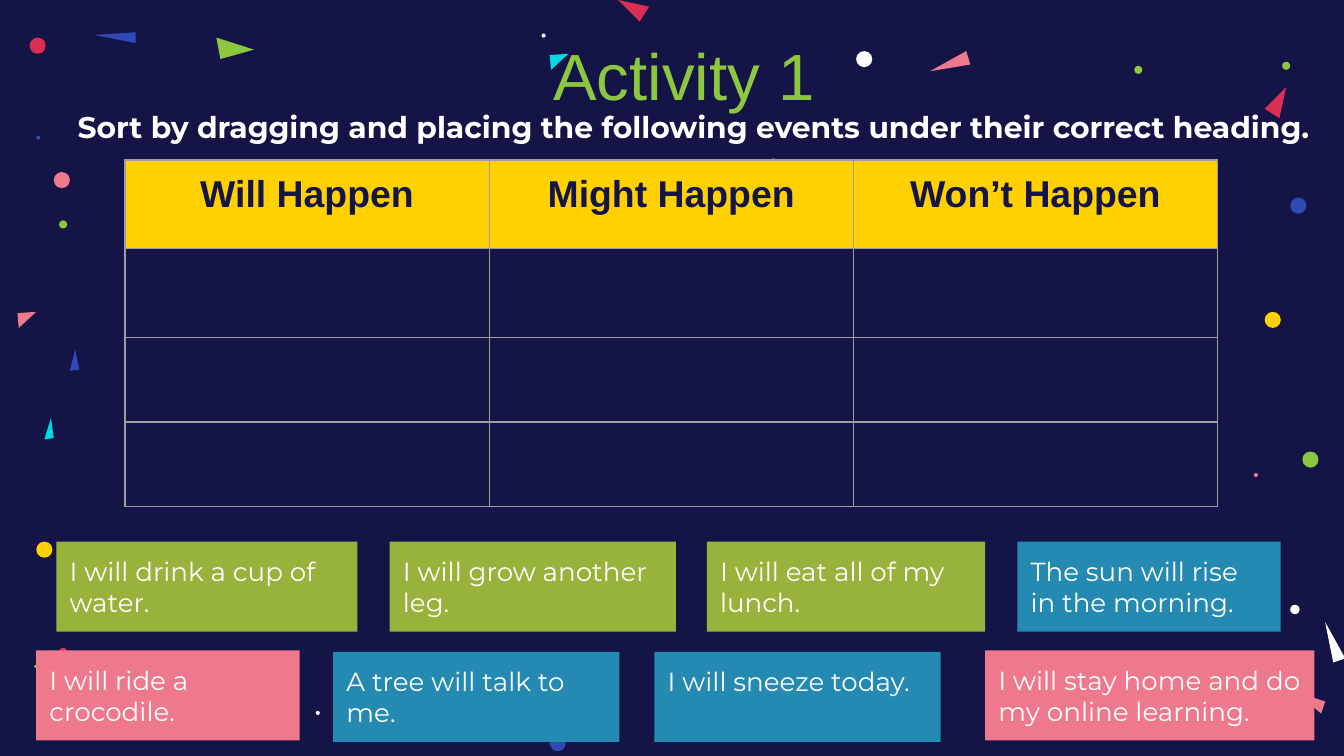
"""Build the Activity 1 sorting slide with its table and event cards."""
from lxml import etree
from pptx import Presentation
from pptx import util as u
from pptx.dml.color import RGBColor
from pptx.enum import shapes, text
from pptx.oxml import ns

NAVY = RGBColor(0x14, 0x14, 0x47)
WHITE = RGBColor(0xFF, 0xFF, 0xFF)
LIME = RGBColor(0x8D, 0xC6, 0x3F)
GOLD = RGBColor(0xFF, 0xD1, 0x00)
PINK = RGBColor(0xEE, 0x79, 0x8D)
RED = RGBColor(0xDB, 0x2E, 0x53)
BLUE = RGBColor(0x30, 0x49, 0xB5)
CYAN = RGBColor(0x00, 0xD9, 0xE2)
OLIVE = RGBColor(0x97, 0xB3, 0x3C)
TEAL = RGBColor(0x24, 0x8A, 0xB1)
GREY = RGBColor(0x9E, 0x9E, 0x9E)

TITLE = "Activity 1"
TASK = "Sort by dragging and placing the following events under their correct heading."
HEADS = ["Will Happen", "Might Happen", "Won’t Happen"]
ROWS = [0.66, 0.66, 0.63, 0.63]
COL = 2.71
CARDS = [
    ("I will drink a cup of water.", 0.42, 4.03, 2.24, OLIVE),
    ("I will grow another leg.", 2.9, 4.03, 2.13, OLIVE),
    ("I will eat all of my lunch.", 5.26, 4.03, 2.07, OLIVE),
    ("The sun will rise in the morning.", 7.57, 4.03, 1.96, TEAL),
    ("A tree will talk to me.", 2.48, 4.85, 2.13, TEAL),
    ("I will sneeze today.", 4.87, 4.85, 2.13, TEAL),
    ("I will ride a crocodile.", 0.27, 4.84, 1.96, PINK),
    ("I will stay home and do my online learning.", 7.33, 4.84, 2.45, PINK),
]
DOTS = {
    0.03: [(9.33, 3.52, PINK), (9.09, 0.92, WHITE), (2.35, 5.29, WHITE),
           (4.03, 0.25, WHITE), (5.74, 1.18, WHITE), (0.27, 1.01, BLUE)],
    0.06: [(0.44, 1.64, LIME), (0.44, 4.82, RED), (9.54, 0.46, LIME),
           (8.44, 0.49, LIME)],
    0.07: [(9.6, 4.5, WHITE)],
    0.12: [(9.6, 1.47, BLUE), (0.4, 1.28, PINK), (4.09, 5.47, BLUE),
           (0.22, 0.28, RED), (0.27, 4.03, GOLD), (6.37, 0.38, WHITE),
           (9.41, 2.32, GOLD), (9.69, 3.36, LIME)],
}
SHARDS = [
    (LIME, (0.4, 4.84), (0.25, 4.96), (0.36, 5.03)),
    (BLUE, (0.56, 2.6), (0.52, 2.76), (0.59, 2.75)),
    (BLUE, (1.01, 0.24), (0.7, 0.26), (1.01, 0.32)),
    (PINK, (0.27, 2.32), (0.13, 2.33), (0.14, 2.44)),
    (CYAN, (0.38, 3.11), (0.33, 3.27), (0.4, 3.26)),
    (RED, (4.6, 0), (4.76, 0.16), (4.83, 0.05)),
    (LIME, (1.61, 0.28), (1.64, 0.44), (1.89, 0.37)),
    (PINK, (7.19, 0.38), (6.92, 0.53), (7.22, 0.48)),
    (CYAN, (4.23, 0.4), (4.09, 0.41), (4.1, 0.52)),
    (PINK, (9.86, 5.22), (9.64, 5.15), (9.83, 5.31)),
    (WHITE, (10.01, 4.9), (9.86, 4.63), (9.92, 4.93)),
    (RED, (9.57, 0.65), (9.41, 0.81), (9.52, 0.88)),
]


def write(frame, words, size, font="Montserrat", color=WHITE, bold=False,
          align=text.PP_ALIGN.LEFT):
    frame.word_wrap = True
    frame.vertical_anchor = text.MSO_ANCHOR.TOP
    frame.margin_left = frame.margin_right = u.Inches(0.1)
    frame.margin_top = frame.margin_bottom = u.Inches(0.1)
    par = frame.paragraphs[0]
    par.alignment = align
    run = par.add_run()
    run.text = words
    face = run.font
    face.size, face.name, face.bold = u.Pt(size), font, bold
    face.color.rgb = color


def paint(shape, color):
    shape.shadow.inherit = False
    shape.fill.solid()
    shape.fill.fore_color.rgb = color
    shape.line.fill.background()


def edge(cell):
    props = cell._tc.get_or_add_tcPr()
    for spot, side in enumerate(("lnL", "lnR", "lnT", "lnB")):
        line = etree.Element(ns.qn("a:" + side), w=str(u.Pt(0.75)))
        fill = etree.SubElement(line, ns.qn("a:solidFill"))
        etree.SubElement(fill, ns.qn("a:srgbClr"), val=str(GREY))
        props.insert(spot, line)


def main():
    deck = Presentation()
    deck.slide_width = u.Inches(10)
    deck.slide_height = u.Inches(10 * 9 / 16)
    slide = deck.slides.add_slide(deck.slide_layouts[5])
    slide.background.fill.solid()
    slide.background.fill.fore_color.rgb = NAVY
    items = slide.shapes

    for size, dots in DOTS.items():
        for left, top, color in dots:
            box = map(u.Inches, (left, top, size, size))
            paint(items.add_shape(shapes.MSO_SHAPE.OVAL, *box), color)
    for color, *points in SHARDS:
        first, *rest = [(u.Inches(x), u.Inches(y)) for x, y in points]
        pen = items.build_freeform(*first)
        pen.add_line_segments(rest, close=True)
        paint(pen.convert_to_shape(), color)

    title = items.title
    title.left, title.top = u.Inches(0.79), u.Inches(0.16)
    title.width, title.height = u.Inches(8.6), u.Inches(0.63)
    write(title.text_frame, TITLE, 35, font="Arial", color=LIME,
          align=text.PP_ALIGN.CENTER)
    title.text_frame.auto_size = text.MSO_AUTO_SIZE.NONE
    items.element.append(title.element)

    task = items.add_textbox(*map(u.Inches, (0.48, 0.71, 9.67, 0.73)))
    write(task.text_frame, TASK, 16, bold=True)

    box = map(u.Inches, (0.93, 1.19, COL * len(HEADS), sum(ROWS)))
    grid = items.add_table(len(ROWS), len(HEADS), *box).table
    for row, high in zip(grid.rows, ROWS):
        row.height = u.Inches(high)
    for col in grid.columns:
        col.width = u.Inches(COL)
    for cell in grid.iter_cells():
        cell.fill.background()
        edge(cell)
    for cell, head in zip(grid.rows[0].cells, HEADS):
        cell.fill.solid()
        cell.fill.fore_color.rgb = GOLD
        cell.margin_left = cell.margin_right = u.Inches(0.1)
        cell.margin_top = cell.margin_bottom = u.Inches(0.1)
        write(cell.text_frame, head, 20, font="Arial", color=NAVY, bold=True,
              align=text.PP_ALIGN.CENTER)

    for words, left, top, wide, color in CARDS:
        box = map(u.Inches, (left, top, wide, 0.67))
        card = items.add_shape(shapes.MSO_SHAPE.RECTANGLE, *box)
        paint(card, color)
        write(card.text_frame, words, 14)
        card.text_frame.auto_size = text.MSO_AUTO_SIZE.SHAPE_TO_FIT_TEXT

    deck.save("out.pptx")


if __name__ == "__main__":
    main()
